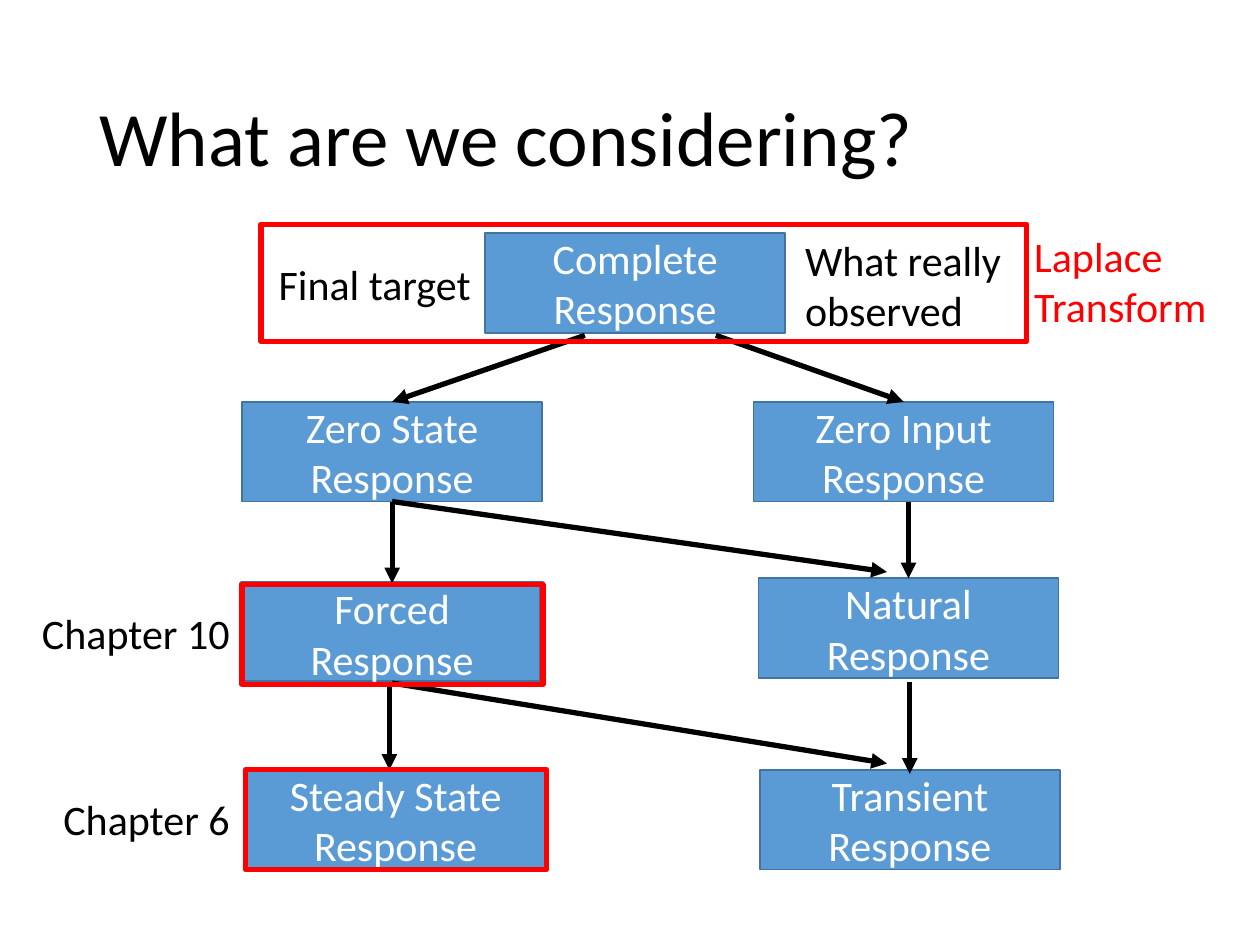
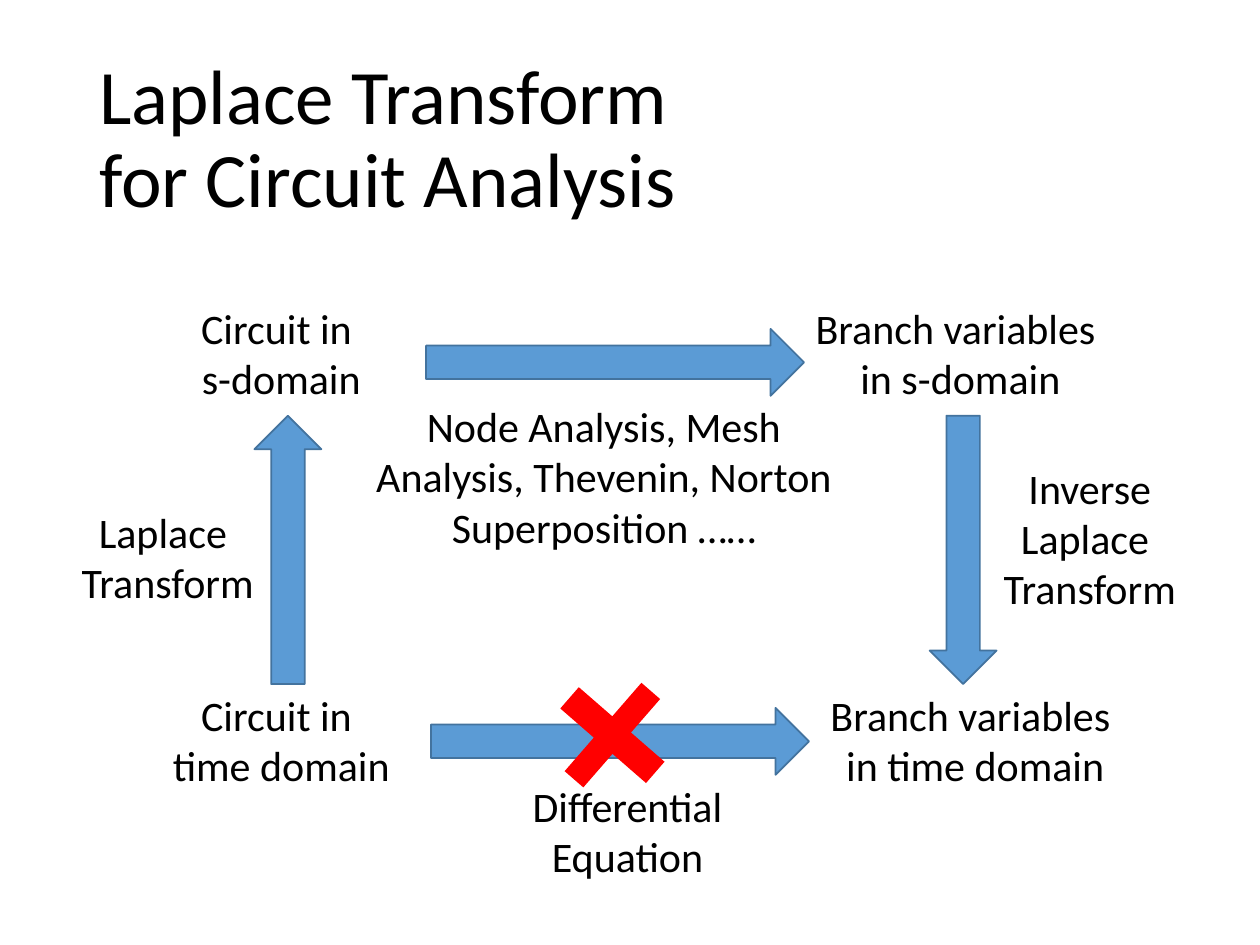
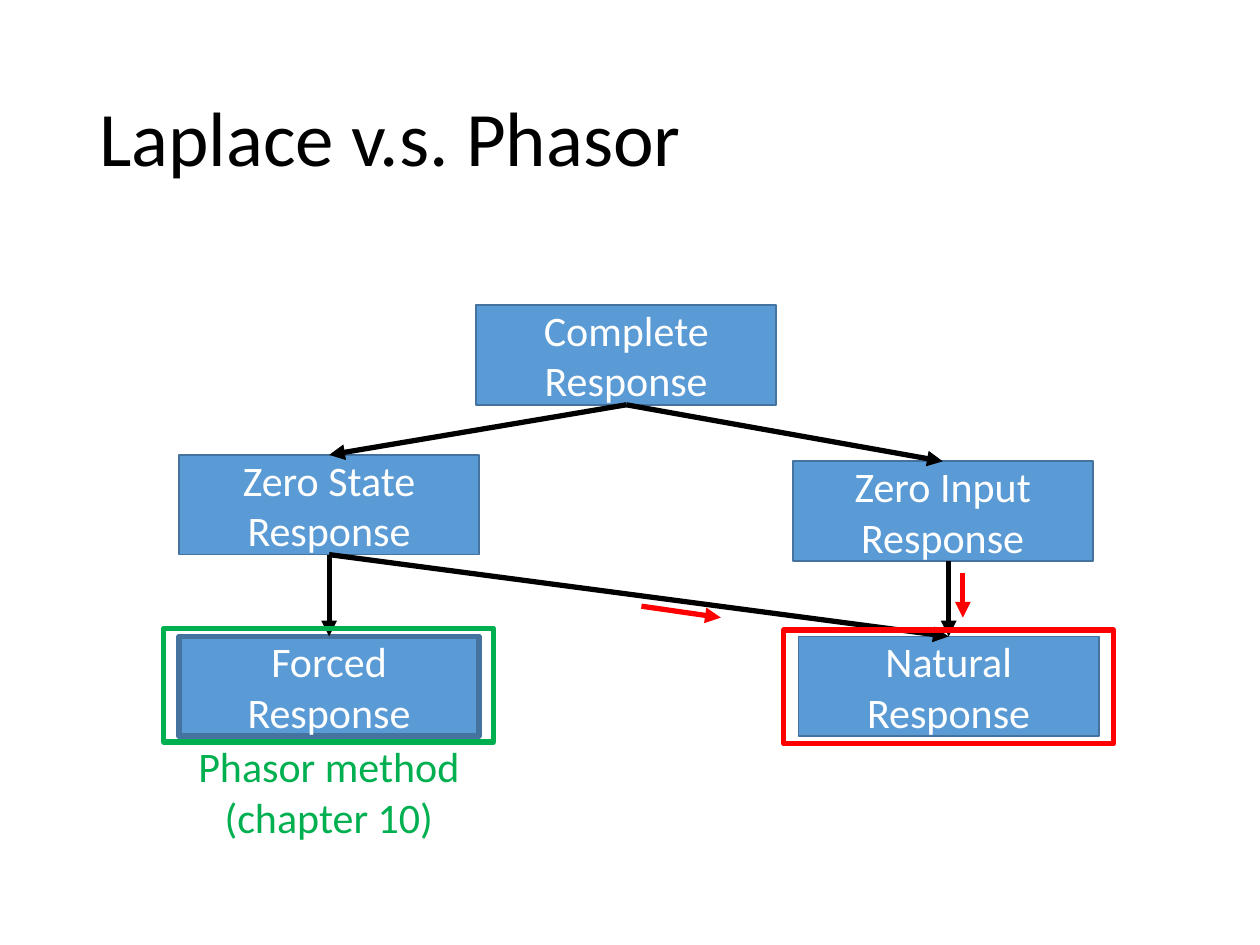
from dataclasses import dataclass

from lxml.etree import SubElement
from pptx import Presentation
from pptx.dml.color import RGBColor
from pptx.enum.shapes import MSO_CONNECTOR, MSO_SHAPE
from pptx.enum.text import MSO_ANCHOR, PP_ALIGN
from pptx.oxml.ns import qn
from pptx.util import Cm, Pt

BLUE = RGBColor(0x5B, 0x9B, 0xD5)
DARK_BLUE = RGBColor(0x43, 0x73, 0x9E)
BLACK = RGBColor(0x00, 0x00, 0x00)
WHITE = RGBColor(0xFF, 0xFF, 0xFF)
RED = RGBColor(0xFF, 0x00, 0x00)
GREEN = RGBColor(0x00, 0xB0, 0x50)
FONT = "Calibri"
THIN, THICK = 1, 3
BOX_W, BOX_H = 6.05, 2.01
LINE_2, LINE_3 = 2.31, 3.33  # heights of two-line and three-line labels

Point = tuple[float, float]


# Repeated elements, all lengths in centimetres
@dataclass
class Box:
    text: str
    x: float
    y: float
    line: float = THIN

    @property
    def top(self) -> Point:
        return self.x + BOX_W / 2, self.y

    @property
    def bottom(self) -> Point:
        return self.x + BOX_W / 2, self.y + BOX_H


@dataclass
class Arrow:
    start: Point
    end: Point
    color: RGBColor = BLACK


@dataclass
class Frame:
    x: float
    y: float
    w: float
    h: float
    color: RGBColor = RED


@dataclass
class Label:
    text: str
    x: float
    y: float
    w: float
    h: float = LINE_2
    align: PP_ALIGN = PP_ALIGN.CENTER
    color: RGBColor = BLACK


@dataclass
class BlockArrow:
    x: float
    y: float
    length: float
    rotation: float = 0


def write(sp, text: str, *, size=24, color=BLACK, align=PP_ALIGN.CENTER,
          anchor=MSO_ANCHOR.TOP, spacing=1.0) -> None:
    tf = sp.text_frame
    tf.word_wrap = True
    tf.vertical_anchor = anchor
    for i, line in enumerate(text.split("\n")):
        p = tf.paragraphs[0] if i == 0 else tf.add_paragraph()
        p.alignment = align
        p.line_spacing = spacing
        r = p.add_run()
        r.text = line
        r.font.name = FONT
        r.font.size = Pt(size)
        r.font.color.rgb = color


def add_shape(s, kind, x: float, y: float, w: float, h: float, *,
              fill=None, line=None, width=THIN):
    sp = s.shapes.add_shape(kind, Cm(x), Cm(y), Cm(w), Cm(h))
    sp.shadow.inherit = False
    if fill is None:
        sp.fill.background()
    else:
        sp.fill.solid()
        sp.fill.fore_color.rgb = fill
    if line is None:
        sp.line.fill.background()
    else:
        sp.line.color.rgb = line
        sp.line.width = Pt(width)
    return sp


def add_box(s, box: Box) -> None:
    sp = add_shape(s, MSO_SHAPE.RECTANGLE, box.x, box.y, BOX_W, BOX_H,
                   fill=BLUE, line=DARK_BLUE, width=box.line)
    write(sp, box.text, color=WHITE, anchor=MSO_ANCHOR.MIDDLE)


def add_arrow(s, arrow: Arrow) -> None:
    ends = [Cm(v) for v in (*arrow.start, *arrow.end)]
    sp = s.shapes.add_connector(MSO_CONNECTOR.STRAIGHT, *ends)
    sp.line.color.rgb = arrow.color
    sp.line.width = Pt(THICK)
    SubElement(sp.line._get_or_add_ln(), qn("a:tailEnd"), type="triangle")
    SubElement(sp._element.spPr, qn("a:effectLst"))


def add_frame(s, frame: Frame) -> None:
    add_shape(s, MSO_SHAPE.RECTANGLE, frame.x, frame.y, frame.w, frame.h,
              line=frame.color, width=THICK)


def add_label(s, label: Label) -> None:
    sp = s.shapes.add_textbox(Cm(label.x), Cm(label.y), Cm(label.w), Cm(label.h))
    write(sp, label.text, color=label.color, align=label.align)


def add_block_arrow(s, arrow: BlockArrow) -> None:
    sp = add_shape(s, MSO_SHAPE.RIGHT_ARROW, arrow.x, arrow.y, arrow.length, 1.35,
                   fill=BLUE, line=DARK_BLUE)
    sp.rotation = arrow.rotation


DRAW = {Box: add_box, Arrow: add_arrow, Frame: add_frame,
        Label: add_label, BlockArrow: add_block_arrow}


def add_slide(prs, title: str, *items):
    s = prs.slides.add_slide(prs.slide_layouts[6])
    sp = s.shapes.add_textbox(Cm(1.75), Cm(1.01), Cm(21.9), Cm(3.68))
    write(sp, title, size=44, align=PP_ALIGN.LEFT,
          anchor=MSO_ANCHOR.MIDDLE, spacing=0.9)
    for item in items:
        DRAW[type(item)](s, item)
    return s


def considering_slide(prs) -> None:
    complete = Box("Complete Response", 9.78, 4.7)
    natural = Box("Natural Response", 15.29, 11.66)
    forced = Box("Forced Response", 4.88, 11.76, THICK)
    zero_state = Box("Zero State Response", 4.88, 8.1)
    zero_input = Box("Zero Input Response", 15.19, 8.1)
    transient = Box("Transient Response", 15.32, 15.52)
    steady = Box("Steady State Response", 4.95, 15.52)
    add_slide(
        prs, "What are we considering?",
        complete, natural, forced, zero_state, zero_input, transient, steady,
        Arrow((11.79, 6.76), zero_state.top),
        Arrow((14.43, 6.76), zero_input.top),
        Arrow(zero_state.bottom, forced.top),
        Arrow((natural.top[0], zero_input.bottom[1]), natural.top),
        Arrow(zero_state.bottom, (17.88, 11.53)),
        Arrow(forced.bottom, (17.88, 15.39)),
        Arrow((7.85, forced.bottom[1]), (7.85, steady.y)),
        Arrow((18.34, 13.74), (18.34, 15.6)),
        Frame(steady.x, steady.y, 6.07, BOX_H),
        Frame(5.26, 4.52, 15.44, 2.36),
        Frame(forced.x, 11.79, 6.07, BOX_H),
        Label("Final target", 5.33, 5.08, 4.45, 1.27),
        Label("What really observed", 15.98, 4.6, 6.05, align=PP_ALIGN.LEFT),
        Label("Chapter 6", 0.56, 15.88, 4.32, 1.27, PP_ALIGN.RIGHT),
        Label("Chapter 10", 0.56, 12.12, 4.32, 1.27, PP_ALIGN.RIGHT),
        Label("Laplace\nTransform", 20.6, 4.52, 4.32, align=PP_ALIGN.LEFT, color=RED),
    )


def circuit_slide(prs) -> None:
    label_w, s_row, time_row = 7.98, 5.97, 13.77
    s = add_slide(
        prs, "Laplace Transform \nfor Circuit Analysis",
        Label("Circuit in \ntime domain", 1.68, time_row, label_w),
        Label("Circuit in \ns-domain", 1.68, s_row, label_w),
        Label("Branch variables \nin s-domain", 15.37, s_row, label_w),
        Label("Branch variables \nin time domain", 15.67, time_row, label_w),
        Label("Laplace \nTransform", -0.61, 10.08, label_w),
        Label("Inverse\nLaplace \nTransform", 17.98, 9.19, label_w, LINE_3),
        Label("Differential Equation", 9.96, 15.6, 5.38),
        Label("Node Analysis, Mesh Analysis, Thevenin, Norton Superposition ……",
              7.26, 7.95, 9.83, LINE_3),
        BlockArrow(8.69, 14.27, 7.62),
        BlockArrow(3.1, 10.41, 5.41, 270),
        BlockArrow(8.59, 6.63, 7.62),
        BlockArrow(16.71, 10.41, 5.41, 90),
    )
    # Cross over the time-domain route
    cross = add_shape(s, MSO_SHAPE.CROSS, 11.2, 13.64, 2.29, 2.36, fill=RED)
    cross.adjustments[0] = 0.391
    cross.rotation = 41


def phasor_slide(prs) -> None:
    complete = Box("Complete Response", 9.6, 6.15)
    natural = Box("Natural Response", 16.1, 12.83)
    forced = Box("Forced Response", 3.61, 12.83, THICK)
    zero_state = Box("Zero State Response", 3.61, 9.17)
    zero_input = Box("Zero Input Response", 15.98, 9.3)
    add_slide(
        prs, "Laplace v.s. Phasor",
        complete, natural, forced, zero_state, zero_input,
        Arrow(complete.bottom, zero_state.top),
        Arrow(complete.bottom, zero_input.top),
        Arrow(zero_state.bottom, forced.top),
        Arrow((natural.top[0], zero_input.bottom[1]), natural.top),
        Arrow(zero_state.bottom, natural.top),
        Label("Phasor method (chapter 10)", 2.59, 14.81, 8.08, color=GREEN),
        Frame(3.3, 12.67, 6.65, 2.29, GREEN),
        Frame(15.8, 12.7, 6.65, 2.29),
        Arrow((19.41, 11.56), (19.41, 12.45), RED),
        Arrow((12.93, 12.22), (14.53, 12.45), RED),
    )


def main() -> None:
    prs = Presentation()
    prs.slide_width, prs.slide_height = Cm(25.4), Cm(19.05)
    considering_slide(prs)
    circuit_slide(prs)
    phasor_slide(prs)
    prs.save("out.pptx")


if __name__ == "__main__":
    main()
